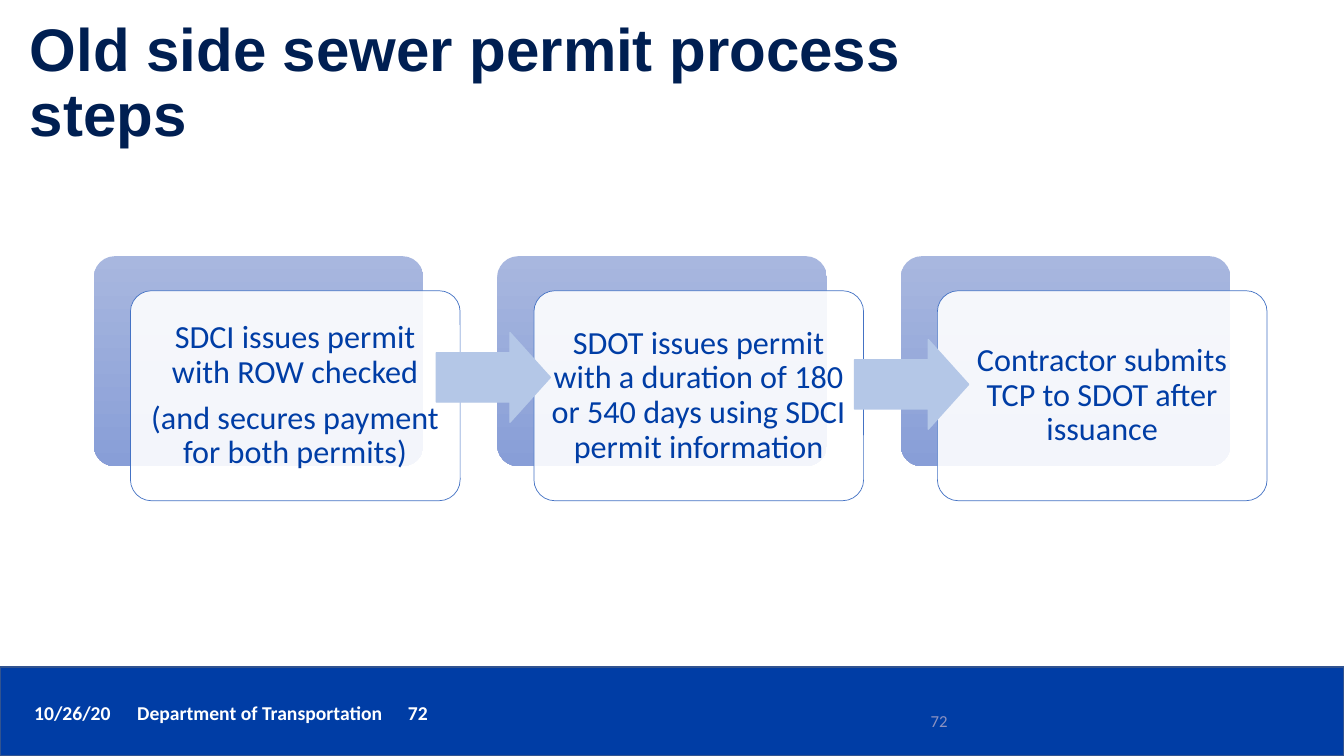
from lxml import etree
from pptx import Presentation
from pptx.dml.color import RGBColor
from pptx.enum.shapes import MSO_SHAPE
from pptx.enum.text import MSO_ANCHOR, MSO_AUTO_SIZE, PP_ALIGN
from pptx.oxml.ns import qn
from pptx.util import Pt

RECTANGLE = MSO_SHAPE.RECTANGLE
ROUNDED = MSO_SHAPE.ROUNDED_RECTANGLE
RIGHT_ARROW = MSO_SHAPE.RIGHT_ARROW
MIDDLE = MSO_ANCHOR.MIDDLE
NO_AUTOFIT = MSO_AUTO_SIZE.NONE
LEFT, CENTER, RIGHT = PP_ALIGN.LEFT, PP_ALIGN.CENTER, PP_ALIGN.RIGHT

WHITE = RGBColor(0xFF, 0xFF, 0xFF)
NAVY = RGBColor(0x00, 0x1F, 0x52)
BLUE = RGBColor(0x00, 0x3D, 0xA5)
FOOTER_EDGE = RGBColor(0x31, 0x53, 0x8F)
CARD_EDGE = RGBColor(0x44, 0x72, 0xC4)
PANEL_TOP = RGBColor(0xA8, 0xB7, 0xDF)
PANEL_BOTTOM = RGBColor(0x88, 0x9E, 0xD7)
ARROW_BLUE = RGBColor(0xB4, 0xC7, 0xE7)
NUMBER_GREY = RGBColor(0x8C, 0x92, 0xC1)

STEPS = [
    ["SDCI issues permit with ROW checked", "(and secures payment for both permits)"],
    ["SDOT issues permit with a duration of 180 or 540 days using SDCI permit information"],
    ["Contractor submits TCP to SDOT after issuance"],
]
STEP_LEFT, STEP_TOP, STEP_PITCH = 67, 183, 288.2
STEP_WIDTH, STEP_HEIGHT = 235.5, 150
CARD_SHIFT_X, CARD_SHIFT_Y = 26.2, 24.7
ARROW_CORNERS = [(311.7, 237.6), (610.5, 242.6)]
FOOTER_TABS = [73.6, 267]


def add_shape(kind, left, top, width, height):
    shape = slide.shapes.add_shape(kind, Pt(left), Pt(top), Pt(width), Pt(height))
    shape.shadow.inherit = False
    return shape


def write(frame, lines, font, size, color, bold=False, align=LEFT):
    frame.text = "\n".join(lines)
    frame.word_wrap = True
    frame.auto_size = NO_AUTOFIT
    frame.vertical_anchor = MIDDLE
    for paragraph in frame.paragraphs:
        paragraph.alignment = align
        for run in paragraph.runs:
            run.font.name = font
            run.font.size = Pt(size)
            run.font.bold = bold
            run.font.color.rgb = color


deck = Presentation()
deck.slide_width, deck.slide_height = Pt(960), Pt(540)
slide = deck.slides.add_slide(deck.slide_layouts[5])

footer_band = add_shape(RECTANGLE, 0, 476.5, 960, 63.5)
footer_band.fill.solid()
footer_band.fill.fore_color.rgb = BLUE
footer_band.line.color.rgb = FOOTER_EDGE
footer_band.line.width = Pt(1)

footer = slide.shapes.add_textbox(Pt(17.3), Pt(496.5), Pt(724), Pt(24.5)).text_frame
write(footer, ["10/26/20\tDepartment of Transportation\t72"], "Calibri", 14, WHITE, bold=True)
tab_list = etree.SubElement(footer.paragraphs[0]._p.get_or_add_pPr(), qn("a:tabLst"))
for stop in FOOTER_TABS:
    etree.SubElement(tab_list, qn("a:tab"), pos=str(Pt(stop)), algn="l")

page_number = slide.shapes.add_textbox(Pt(516), Pt(500.5), Pt(168), Pt(28.8)).text_frame
write(page_number, ["72"], "Calibri", 12, NUMBER_GREY, align=RIGHT)

title = slide.shapes.title
title.left, title.top, title.width, title.height = Pt(14.2), Pt(10.8), Pt(734), Pt(98.6)
write(title.text_frame, ["Old side sewer permit process steps"], "Arial", 42.9, NAVY, bold=True)
title.text_frame.paragraphs[0].line_spacing = 0.9

for index, lines in enumerate(STEPS):
    left = STEP_LEFT + index * STEP_PITCH
    panel = add_shape(ROUNDED, left, STEP_TOP, STEP_WIDTH, STEP_HEIGHT)
    panel.adjustments[0] = 0.1
    panel.fill.gradient()
    panel.fill.gradient_angle = 270
    for gradient_stop, color in zip(panel.fill.gradient_stops, (PANEL_TOP, PANEL_BOTTOM)):
        gradient_stop.color.rgb = color
    panel.line.fill.background()

    card = add_shape(ROUNDED, left + CARD_SHIFT_X, STEP_TOP + CARD_SHIFT_Y, STEP_WIDTH, STEP_HEIGHT)
    card.adjustments[0] = 0.1
    card.fill.solid()
    card.fill.fore_color.rgb = WHITE
    card_color = card._element.spPr.find(qn("a:solidFill")).find(qn("a:srgbClr"))
    etree.SubElement(card_color, qn("a:alpha"), val="90000")
    card.line.color.rgb = CARD_EDGE
    card.line.width = Pt(0.5)
    write(card.text_frame, lines, "Calibri", 23, BLUE, align=CENTER)
    card.text_frame.margin_left = card.text_frame.margin_right = Pt(6.9)
    for paragraph in card.text_frame.paragraphs:
        paragraph.line_spacing = 0.9
        paragraph.space_after = Pt(8)

for left, top in ARROW_CORNERS:
    arrow = add_shape(RIGHT_ARROW, left, top, 81.4, 64)
    arrow.adjustments[0] = 0.55
    arrow.adjustments[1] = 0.45
    arrow.fill.solid()
    arrow.fill.fore_color.rgb = ARROW_BLUE
    arrow.line.color.rgb = ARROW_BLUE
    arrow.line.width = Pt(1)

deck.save("out.pptx")
